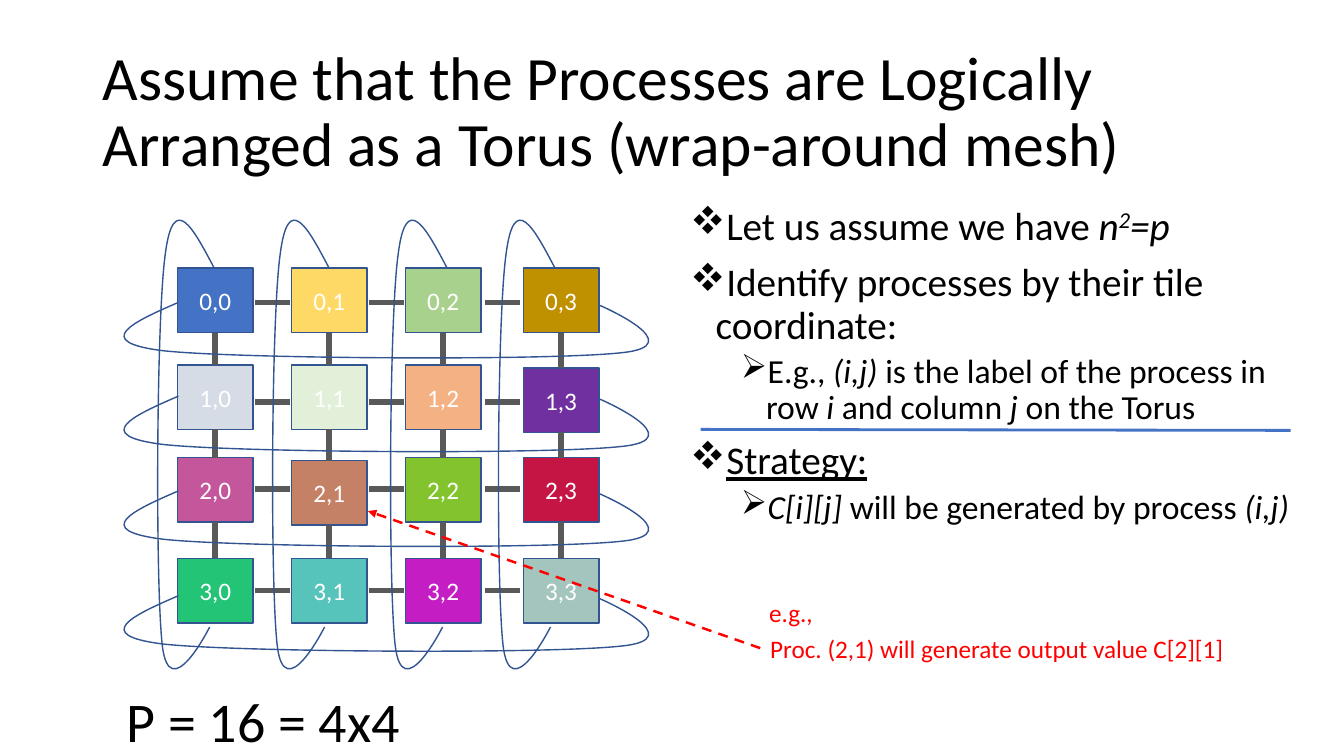
import dataclasses

import lxml.etree
import pptx
import pptx.dml.color
import pptx.enum.dml
import pptx.enum.shapes
import pptx.enum.text
import pptx.oxml.ns
import pptx.util

Inches = pptx.util.Inches
qn = pptx.oxml.ns.qn


@dataclasses.dataclass(frozen=True)
class Theme:
    font: str = "Calibri"
    text: str = "000000"
    light: str = "FFFFFF"
    accent: str = "4472C4"
    outline: str = "325491"
    link: str = "595959"
    note: str = "FF0000"
    title_size: int = 44
    summary_size: int = 40
    bullet_sizes: tuple = (28, 24)
    label_size: int = 18


NODE_COLORS = (
    ("4472C4", "FFD966", "A9D18E", "BF9000"),
    ("D6DCE5", "E2F0D9", "F4B183", "7030A0"),
    ("C4579C", "C48166", "83C42E", "C41544"),
    ("24C477", "56C4BA", "C41DC4", "A4C4BE"),
)
NODE_LEFTS = (1.76, 2.89, 4.02, 5.19)
NODE_TOPS = (2.66, 3.62, 4.54, 5.54)
NODE_DROPS = {(1, 3): 0.03, (2, 1): 0.03}
NODE_WIDTH, NODE_HEIGHT = 0.75, 0.64
LINK_LEFTS = (2.53, 3.66, 4.81)
LINK_LEVELS = (3, 3.99, 4.85, 5.86)
LINK_LENGTH = 0.35

COLUMN_LOOP = ((2.12, 2.65), (1.92, 2.27), (1.72, 1.89), (1.64, 2.52), (1.55, 3.15),
               (1.54, 5.79), (1.61, 6.4), (1.68, 7.02), (2.08, 6.22), (2.08, 6.22))
ROW_LOOP = ((1.77, 3), (1.33, 3.19), (0.89, 3.39), (1.62, 3.48), (2.35, 3.56),
            (5.44, 3.58), (6.16, 3.5), (6.88, 3.43), (5.95, 3.03), (5.95, 3.03))
COLUMN_LOOP_SHIFTS = (0, 1.14, 2.31, 3.38)
ROW_LOOP_SHIFTS = (0, 0.93, 1.87, 2.91)

BULLETS = (
    (0, (("Let us assume we have ", ""), ("n", "i"), ("2", "i^"), ("=p", "i"))),
    (0, (("Identify processes by their tile coordinate:", ""),)),
    (1, (("E.g., ", ""), ("(i,j) ", "i"), ("is the label of the process in row ", ""),
         ("i", "i"), (" and column ", ""), ("j", "i"), (" on the Torus", ""))),
    (0, (("Strategy:", "u"),)),
    (1, (("C[i][j]", "i"), (" will be generated by process ", ""), ("(i,j)", "i"))),
)


def curve_bounds(controls, steps=40):
    samples = []
    for start in range(0, len(controls) - 1, 3):
        for t in (step / steps for step in range(steps + 1)):
            weights = ((1 - t) ** 3, 3 * t * (1 - t) ** 2, 3 * t * t * (1 - t), t ** 3)
            samples.append([sum(w * value for w, value in zip(weights, values))
                            for values in zip(*controls[start:start + 4])])
    across, down = zip(*samples)
    return min(across), min(down), max(across), max(down)


class SlideBuilder:
    def __init__(self, slide, theme):
        self.slide = slide
        self.theme = theme

    def color(self, value):
        return pptx.dml.color.RGBColor.from_string(value)

    def style_text(self, paragraph, size, color):
        paragraph.font.name = self.theme.font
        paragraph.font.size = pptx.util.Pt(size)
        paragraph.font.color.rgb = self.color(color)

    def style_line(self, line, color, width):
        line.color.rgb = self.color(color)
        line.width = pptx.util.Pt(width)

    def title(self, text, left, top, width, height):
        title = self.slide.shapes.title
        title.left, title.top = Inches(left), Inches(top)
        title.width, title.height = Inches(width), Inches(height)
        frame = title.text_frame
        frame.text = text
        frame.auto_size = pptx.enum.text.MSO_AUTO_SIZE.NONE
        frame.vertical_anchor = pptx.enum.text.MSO_ANCHOR.MIDDLE
        paragraph = frame.paragraphs[0]
        paragraph.alignment = pptx.enum.text.PP_ALIGN.LEFT
        paragraph.line_spacing = 0.9
        self.style_text(paragraph, self.theme.title_size, self.theme.text)

    def text(self, text, left, top, width, height, size, color, wrap=False):
        box = self.slide.shapes.add_textbox(
            Inches(left), Inches(top), Inches(width), Inches(height))
        box.text_frame.word_wrap = wrap
        box.text_frame.text = text
        self.style_text(box.text_frame.paragraphs[0], size, color)

    def bullets(self, items, left, top, width, height):
        box = self.slide.shapes.add_textbox(
            Inches(left), Inches(top), Inches(width), Inches(height))
        frame = box.text_frame
        frame.word_wrap = True
        for index, (level, runs) in enumerate(items):
            paragraph = frame.add_paragraph() if index else frame.paragraphs[0]
            paragraph.level = level
            paragraph.line_spacing = 0.9
            paragraph.space_before = pptx.util.Pt((10, 5)[level])
            properties = paragraph._p.get_or_add_pPr()
            properties.set("marL", str(Inches((0.25, 0.75)[level])))
            properties.set("indent", str(Inches(-0.25)))
            lxml.etree.SubElement(properties, qn("a:buFont"), typeface="Wingdings")
            lxml.etree.SubElement(properties, qn("a:buChar"), char="vØ"[level])
            self.style_text(paragraph, self.theme.bullet_sizes[level], self.theme.text)
            for text, marks in runs:
                run = paragraph.add_run()
                run.text = text
                if "i" in marks:
                    run.font.italic = True
                if "u" in marks:
                    run.font.underline = True
                if "^" in marks:
                    run._r.get_or_add_rPr().set("baseline", "30000")

    def node(self, label, left, top, fill):
        shape = self.slide.shapes.add_shape(
            pptx.enum.shapes.MSO_SHAPE.RECTANGLE,
            Inches(left), Inches(top), Inches(NODE_WIDTH), Inches(NODE_HEIGHT))
        shape.shadow.inherit = False
        shape.fill.solid()
        shape.fill.fore_color.rgb = self.color(fill)
        self.style_line(shape.line, self.theme.outline, 1)
        shape.text_frame.text = label
        shape.text_frame.vertical_anchor = pptx.enum.text.MSO_ANCHOR.MIDDLE
        paragraph = shape.text_frame.paragraphs[0]
        paragraph.alignment = pptx.enum.text.PP_ALIGN.CENTER
        self.style_text(paragraph, self.theme.label_size, self.theme.light)
        return shape

    def line(self, start, end, color, width):
        connector = self.slide.shapes.add_connector(
            pptx.enum.shapes.MSO_CONNECTOR.STRAIGHT,
            *(Inches(value) for value in (*start, *end)))
        self.style_line(connector.line, color, width)
        lxml.etree.SubElement(connector._element.spPr, qn("a:effectLst"))
        return connector

    def vertical_link(self, upper, lower):
        connector = self.line((0, 0), (1, 1), self.theme.link, 4)
        connector.begin_connect(upper, 2)
        connector.end_connect(lower, 0)

    def dashed_arrow(self, start, end):
        connector = self.line(start, end, self.theme.note, 1.75)
        connector.line.dash_style = pptx.enum.dml.MSO_LINE.DASH
        outline = connector.line._get_or_add_ln()
        lxml.etree.SubElement(outline, qn("a:tailEnd"), type="triangle")

    def loop(self, controls, shift_x=0, shift_y=0):
        controls = [(x + shift_x, y + shift_y) for x, y in controls]
        left, top, right, bottom = curve_bounds(controls)
        builder = self.slide.shapes.build_freeform(Inches(left), Inches(top))
        builder.add_line_segments([(Inches(right), Inches(bottom))], close=False)
        shape = builder.convert_to_shape()
        outline = shape._element.find(".//" + qn("a:path"))
        for segment in list(outline):
            outline.remove(segment)
        for index, (x, y) in enumerate(controls):
            if index % 3 == 1 or index == 0:
                kind = "a:cubicBezTo" if index else "a:moveTo"
                segment = lxml.etree.SubElement(outline, qn(kind))
            lxml.etree.SubElement(segment, qn("a:pt"), x=str(Inches(x - left)),
                                  y=str(Inches(y - top)))
        shape.shadow.inherit = False
        shape.fill.background()
        self.style_line(shape.line, self.theme.outline, 1)


def main():
    presentation = pptx.Presentation()
    presentation.slide_width, presentation.slide_height = Inches(13.33), Inches(7.5)
    theme = Theme()
    builder = SlideBuilder(
        presentation.slides.add_slide(presentation.slide_layouts[5]), theme)
    builder.title("Assume that the Processes are Logically Arranged as a Torus "
                  "(wrap-around mesh)", 0.92, 0.4, 11.5, 1.45)
    builder.bullets(BULLETS, 6.75, 2, 6.33, 4.76)
    nodes = {}
    for row, top in enumerate(NODE_TOPS):
        for column, left in enumerate(NODE_LEFTS):
            nodes[row, column] = builder.node(
                f"{row},{column}", left, top + NODE_DROPS.get((row, column), 0),
                NODE_COLORS[row][column])
    for (row, column), node in nodes.items():
        if (row + 1, column) in nodes:
            builder.vertical_link(node, nodes[row + 1, column])
    for left in LINK_LEFTS:
        for level in LINK_LEVELS:
            builder.line((left, level), (left + LINK_LENGTH, level), theme.link, 4)
    for shift in COLUMN_LOOP_SHIFTS:
        builder.loop(COLUMN_LOOP, shift_x=shift)
    for shift in ROW_LOOP_SHIFTS:
        builder.loop(ROW_LOOP, shift_y=shift)
    builder.text("P = 16 = 4x4", 1.16, 6.76, 3.27, 0.77,
                 theme.summary_size, theme.text, wrap=True)
    builder.dashed_arrow((7.54, 6.43), (3.65, 5.07))
    builder.text("Proc. (2,1) will generate output value C[2][1]",
                 7.54, 6.23, 4.75, 0.4, theme.label_size, theme.note)
    builder.text("e.g.,", 7.53, 5.88, 0.64, 0.4, theme.label_size, theme.note)
    builder.line((6.95, 4.26), (12.8, 4.27), theme.accent, 2)
    presentation.save("out.pptx")


if __name__ == "__main__":
    main()
